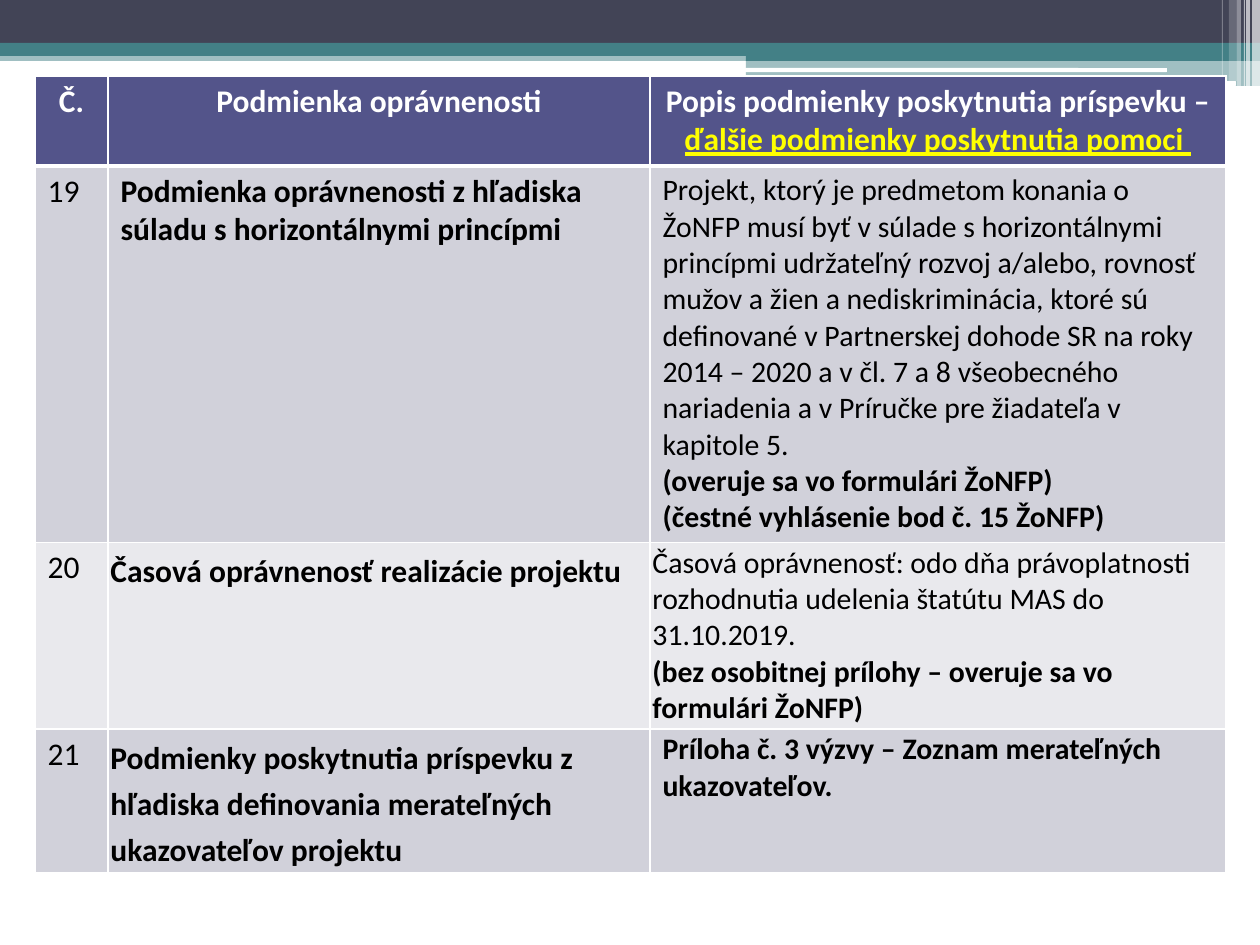
from lxml import etree
from pptx import Presentation
from pptx.dml.color import RGBColor
from pptx.enum.shapes import MSO_SHAPE
from pptx.enum.text import PP_ALIGN
from pptx.oxml.ns import qn
from pptx.util import Inches, Pt

RECT = MSO_SHAPE.RECTANGLE
ROUND = MSO_SHAPE.ROUNDED_RECTANGLE
CENTER = PP_ALIGN.CENTER
SCALE = Inches(1) / 126
COLORS = {
    "dark": "424456", "teal": "438086", "white": "FFFFFF", "black": "000000",
    "yellow": "FFFF00", "header": "53548A", "odd": "D1D1DA", "even": "E9E9ED",
}


def emu(*lengths):
    return [round(length * SCALE) for length in lengths]


def style_run(span, size, bold, color):
    span.font.name = "Calibri"
    span.font.size = Pt(size)
    span.font.bold = bold
    span.font.color.rgb = RGBColor.from_string(COLORS[color])


deck = Presentation()
deck.slide_width, deck.slide_height = emu(1260, 945)
page = deck.slides.add_slide(deck.slide_layouts[6])

bands = [
    (RECT, 0, 50, 1260, 11, "teal", 50),
    (RECT, 0, 0, 1260, 43, "dark", 100),
    (RECT, 0, 43, 1260, 13, "teal", 100),
    (RECT, 746, 49, 514, 12, "teal", 100),
    (RECT, 746, 60, 514, 26, "teal", 50),
    (ROUND, 745, 68, 422, 4, "white", 100),
    (ROUND, 1016, 81, 220, 5, "white", 100),
    (RECT, 1252, 0, 8, 86, "white", 65),
    (RECT, 1246, 0, 4, 86, "white", 65),
    (RECT, 1244, 0, 1, 86, "white", 60),
    (RECT, 1237, 0, 4, 86, "white", 40),
    (RECT, 1229, 0, 8, 81, "white", 20),
    (RECT, 1222, 0, 1, 81, "white", 30),
]
for kind, left, top, width, height, color, opacity in bands:
    band = page.shapes.add_shape(kind, *emu(left, top, width, height))
    band.shadow.inherit = False
    band.line.fill.background()
    band.fill.solid()
    band.fill.fore_color.rgb = RGBColor.from_string(COLORS[color])
    if opacity < 100:
        tint = band.fill._xPr.find(qn("a:solidFill"))[0]
        etree.SubElement(tint, qn("a:alpha"), val=str(opacity * 1000))

rows = [
    [["Č."], ["Podmienka oprávnenosti"], ["Popis podmienky poskytnutia príspevku – "]],
    [
        ["19"],
        ["Podmienka oprávnenosti z hľadiska súladu s horizontálnymi princípmi"],
        [
            "Projekt, ktorý je predmetom konania o ŽoNFP musí byť v súlade "
            "s horizontálnymi princípmi udržateľný rozvoj a/alebo, rovnosť mužov "
            "a žien a nediskriminácia, ktoré sú definované v Partnerskej dohode SR "
            "na roky 2014 – 2020 a v čl. 7 a 8 všeobecného nariadenia "
            "a v Príručke pre žiadateľa v kapitole 5.",
            "(overuje sa vo formulári ŽoNFP)",
            "(čestné vyhlásenie bod č. 15 ŽoNFP)",
        ],
    ],
    [
        ["20"],
        ["Časová oprávnenosť realizácie projektu"],
        [
            "Časová oprávnenosť: odo dňa právoplatnosti rozhodnutia udelenia "
            "štatútu MAS do 31.10.2019.",
            "(bez osobitnej prílohy – overuje sa vo formulári ŽoNFP)",
        ],
    ],
    [
        ["21"],
        ["Podmienky poskytnutia príspevku z hľadiska definovania merateľných "
         "ukazovateľov projektu"],
        ["Príloha č. 3 výzvy – Zoznam merateľných ukazovateľov."],
    ],
]
column_widths = [73, 542, 576]
row_heights = [90, 376, 186, 143]
row_fills = ["header", "odd", "even", "odd"]

frame = page.shapes.add_table(
    len(rows), len(column_widths),
    *emu(35, 76, sum(column_widths), sum(row_heights)))
table = frame.table
for column, width in zip(table.columns, emu(*column_widths)):
    column.width = width
for line, height in zip(table.rows, emu(*row_heights)):
    line.height = height

for row, cells in enumerate(rows):
    for col, texts in enumerate(cells):
        cell = table.cell(row, col)
        borders = cell._tc.get_or_add_tcPr()
        for side in ("lnL", "lnR", "lnT", "lnB"):
            thick = (row == 0 and side == "lnB") or (row == 1 and side == "lnT")
            border = etree.SubElement(borders, qn(f"a:{side}"), w=str(Pt(3 if thick else 1)))
            paint = etree.SubElement(border, qn("a:solidFill"))
            etree.SubElement(paint, qn("a:srgbClr"), val=COLORS["white"])
        cell.fill.solid()
        cell.fill.fore_color.rgb = RGBColor.from_string(COLORS[row_fills[row]])

        tight = row > 1 and col > 0
        if tight:
            cell.margin_left = cell.margin_right = Inches(0.02)
            cell.margin_top = cell.margin_bottom = Inches(0.02)
        cell.text_frame.text = "\n".join(texts)
        for index, para in enumerate(cell.text_frame.paragraphs):
            plain = row > 0 and (col == 0 or (len(texts) > 1 and index == 0))
            size = 17 if row > 0 and col == 2 else 18
            style_run(para.runs[0], size, not plain, "black" if row else "white")
            if row == 0:
                para.alignment = CENTER
            if tight and col == 1:
                para.line_spacing = 1.2
                para.space_before = Pt(3)

highlight = table.cell(0, 2).text_frame.paragraphs[0].add_run()
highlight.text = "ďalšie podmienky poskytnutia pomoci "
style_run(highlight, 18, True, "yellow")
highlight.font.underline = True

indent = table.cell(3, 2).text_frame.paragraphs[0]._p.get_or_add_pPr()
indent.set("marL", str(Inches(0.08)))
indent.set("indent", "0")

deck.save("out.pptx")
